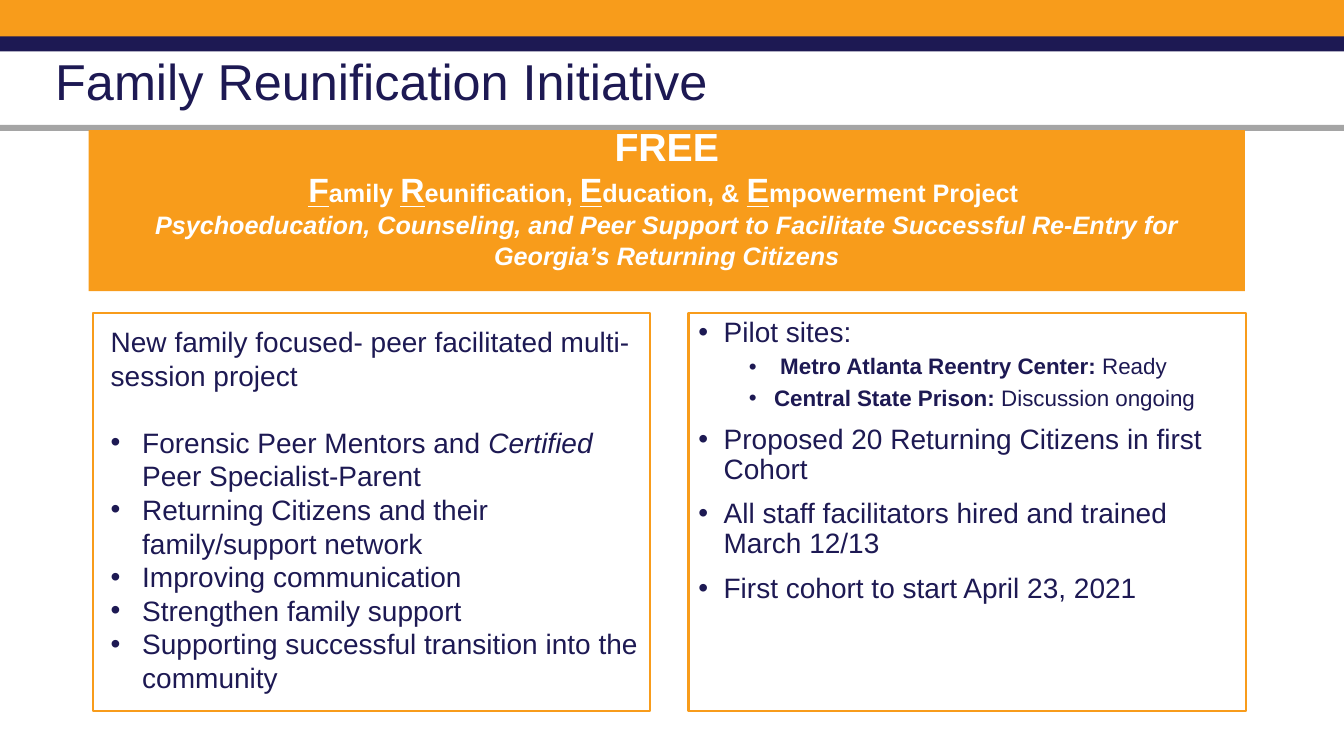
import pptx
import pptx.util
import pptx.dml.color
import pptx.enum.shapes
import pptx.enum.text
from lxml import etree

Pt = pptx.util.Pt
ORANGE, NAVY, GRAY, WHITE = "F89C1B", "1D1953", "A5A5A5", "FFFFFF"

# Content: a run is (text, size, style), style letters b, i, u
TITLE = [("Family Reunification Initiative", 36, "")]
BANNER = [
    [("FREE", 28, "b")],
    [("F", 24, "bu"), ("amily ", 18, "b"),
     ("R", 24, "bu"), ("eunification, ", 18, "b"),
     ("E", 24, "bu"), ("ducation, & ", 18, "b"),
     ("E", 24, "bu"), ("mpowerment Project ", 18, "b")],
    [("Psychoeducation, Counseling, and Peer Support to Facilitate "
      "Successful Re-Entry for Georgia’s Returning Citizens", 18, "bi")],
]
INTRO = [("New family focused- peer facilitated multi-session project", 20, "")]
FOCUS = [
    [("Forensic Peer Mentors and ", 20, ""), ("Certified", 20, "i"),
     (" Peer Specialist-Parent", 20, "")],
    [("Returning Citizens and their family/support network", 20, "")],
    [("Improving communication", 20, "")],
    [("Strengthen family support", 20, "")],
    [("Supporting successful transition into the community", 20, "")],
]
STATUS = [  # (level, runs)
    (0, [("Pilot sites:", 20, "")]),
    (1, [(" ", 16, ""), ("Metro Atlanta Reentry Center: ", 16, "b"), ("Ready", 16, "")]),
    (1, [("Central State Prison: ", 16, "b"), ("Discussion ongoing", 16, "")]),
    (0, [("Proposed 20 Returning Citizens in first Cohort", 20, "")]),
    (0, [("All staff facilitators hired and trained March 12/13", 20, "")]),
    (0, [("First cohort to start April 23, 2021", 20, "")]),
]

# Layout in points
WIDTH, HEIGHT = 960, 540
BANDS = [(0, 28.8, ORANGE), (25.9, 10.8, NAVY), (89.3, 4.3, GRAY)]
BOX_TOP, BOX_W, BOX_H = 223.9, 398.2, 283.7
LEFT_X, RIGHT_X = 66.2, 491.8


def rgb(value):
    return pptx.dml.color.RGBColor.from_string(value)


def rect(x, y, w, h, fill=None, line=None):
    sp = s.shapes.add_shape(pptx.enum.shapes.MSO_SHAPE.RECTANGLE, Pt(x), Pt(y), Pt(w), Pt(h))
    sp.shadow.inherit = False
    if fill:
        sp.fill.solid()
        sp.fill.fore_color.rgb = rgb(fill)
    else:
        sp.fill.background()
    if line:
        sp.line.color.rgb = rgb(line)
        sp.line.width = Pt(1.5)
    else:
        sp.line.fill.background()
    return sp


def textbox(x, y, w, h):
    tf = s.shapes.add_textbox(Pt(x), Pt(y), Pt(w), Pt(h)).text_frame
    tf.word_wrap = True
    return tf


def paragraph(tf, runs, color=NAVY, spacing=1, before=0):
    p = tf.paragraphs[0]
    if p.runs:
        p = tf.add_paragraph()
    p.line_spacing = spacing
    p.space_before = Pt(before)
    for text, size, style in runs:
        r = p.add_run()
        r.text = text
        r.font.name, r.font.size = "Arial", Pt(size)
        r.font.color.rgb = rgb(color)
        r.font.bold, r.font.italic, r.font.underline = (c in style for c in "biu")
    return p


def bullet(p, margin, hang):
    pPr = p._p.get_or_add_pPr()
    pPr.set("marL", str(Pt(margin)))
    pPr.set("indent", str(-Pt(hang)))
    ns = "{http://schemas.openxmlformats.org/drawingml/2006/main}"
    etree.SubElement(pPr, ns + "buFont").set("typeface", "Arial")
    etree.SubElement(pPr, ns + "buChar").set("char", "•")


prs = pptx.Presentation()
prs.slide_width, prs.slide_height = Pt(WIDTH), Pt(HEIGHT)
s = prs.slides.add_slide(prs.slide_layouts[6])

# Header bands
for y, h, color in BANDS:
    rect(0, y, WIDTH, h, fill=color)

# Project banner
tf = rect(63.4, 92.9, 825.8, 115.2, fill=ORANGE).text_frame
tf.word_wrap = True
tf.vertical_anchor = pptx.enum.text.MSO_ANCHOR.MIDDLE
tf.margin_bottom = Pt(24.3)
for runs in BANNER:
    paragraph(tf, runs, WHITE).alignment = pptx.enum.text.PP_ALIGN.CENTER

# Column frames
for x in (LEFT_X, RIGHT_X):
    rect(x, BOX_TOP, BOX_W, BOX_H, line=ORANGE)

# Title
tf = textbox(32.4, 31, 927.6, 57.6)
tf.vertical_anchor = pptx.enum.text.MSO_ANCHOR.MIDDLE
paragraph(tf, TITLE, spacing=0.9)

# Left column: project focus
tf = textbox(72, 228.2, 398.9, 303.1)
paragraph(tf, INTRO)
for i, runs in enumerate(FOCUS):
    bullet(paragraph(tf, runs, before=0 if i else 24), 22.5, 22.5)

# Right column: status
tf = textbox(RIGHT_X, BOX_TOP, 396.7, 308.2)
for level, runs in STATUS:
    p = paragraph(tf, runs, spacing=0.9, before=5 if level else 10)
    p.level = level
    bullet(p, 18 + 36 * level, 18)

prs.save("out.pptx")
